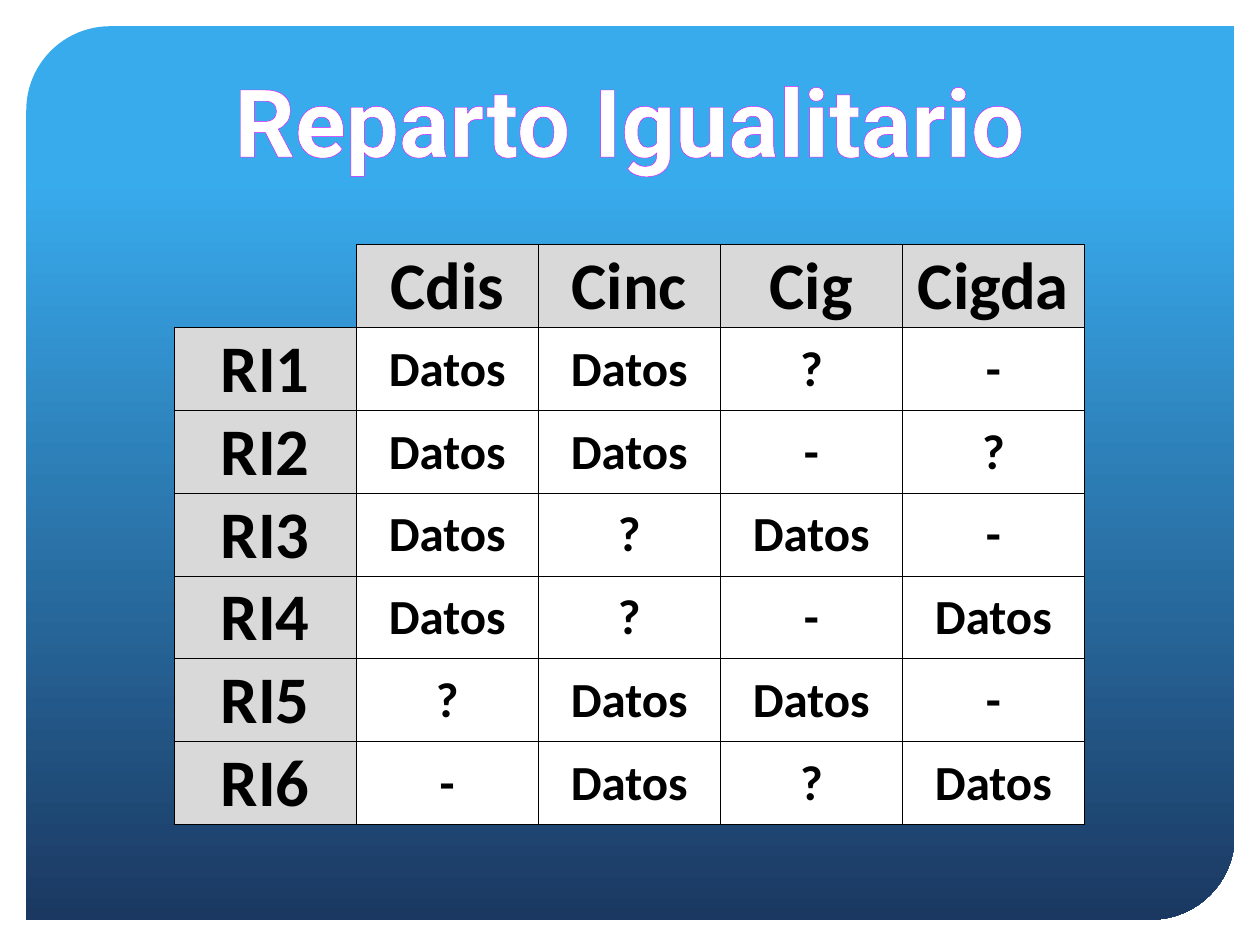
from lxml.etree import SubElement
from pptx import Presentation
from pptx.dml.color import RGBColor
from pptx.enum.shapes import MSO_SHAPE as Shape
from pptx.enum.text import MSO_ANCHOR as Anchor, MSO_AUTO_SIZE as AutoSize, PP_ALIGN as Align
from pptx.oxml.ns import qn
from pptx.util import Cm, Pt


def color(value):
    return RGBColor.from_string(value)


def add_line(parent, tag, width, value):
    line = SubElement(parent, qn(tag), w=str(Pt(width)))
    if value:
        fill = SubElement(line, qn("a:solidFill"))
        SubElement(fill, qn("a:srgbClr"), val=value)
    else:
        SubElement(line, qn("a:noFill"))


deck = Presentation()
deck.slide_width, deck.slide_height = Cm(25.4), Cm(19.05)
page = deck.slides.add_slide(deck.slide_layouts[6])

panel = page.shapes.add_shape(Shape.ROUND_2_DIAG_RECTANGLE, Cm(0.53), Cm(0.53), Cm(24.36), Cm(18.01))
panel.shadow.inherit = False
panel.adjustments[0] = 0.094
panel.adjustments[1] = 0
panel.line.fill.background()
panel.fill.gradient()
panel.fill.gradient_angle = 270
for stop, position, value in zip(panel.fill.gradient_stops, (0.17, 1), ("38ABED", "1B3861")):
    stop.position = position
    stop.color.rgb = color(value)

title = page.shapes.add_textbox(Cm(4.06), Cm(1.14), Cm(17.27), Cm(2.57))
title.text_frame.text = "Reparto Igualitario"
title.text_frame.word_wrap = False
title.text_frame.auto_size = AutoSize.SHAPE_TO_FIT_TEXT
para = title.text_frame.paragraphs[0]
para.alignment = Align.CENTER
span = para.runs[0]
add_line(span.font._element, "a:ln", 1, "E113FF")
span.font.name = "Roboto"
span.font.size = Pt(54)
span.font.bold = True
span.font.color.rgb = color("FFFFFF")

rows = [
    ["", "Cdis", "Cinc", "Cig", "Cigda"],
    ["RI1", "Datos", "Datos", "?", "-"],
    ["RI2", "Datos", "Datos", "-", "?"],
    ["RI3", "Datos", "?", "Datos", "-"],
    ["RI4", "Datos", "?", "-", "Datos"],
    ["RI5", "?", "Datos", "Datos", "-"],
    ["RI6", "-", "Datos", "?", "Datos"],
]
column_width, row_height = Cm(3.67), Cm(1.67)
table = page.shapes.add_table(
    len(rows), len(rows[0]), Cm(3.51), Cm(4.93), column_width * len(rows[0]), row_height * len(rows)
).table
table.first_row = False
table.horz_banding = False
for column in table.columns:
    column.width = column_width
for row in table.rows:
    row.height = row_height

for row_index, texts in enumerate(rows):
    for column_index, text in enumerate(texts):
        cell = table.cell(row_index, column_index)
        cell.vertical_anchor = Anchor.MIDDLE
        cell.margin_left = cell.margin_right = cell.margin_top = Cm(0.03)
        cell.margin_bottom = 0
        properties = cell._tc.get_or_add_tcPr()
        for side in "LRTB":
            visible = text or side in "RB"
            add_line(properties, f"a:ln{side}", 0.5, "000000" if visible else None)
        if not text:
            cell.fill.background()
            continue
        heading = row_index == 0 or column_index == 0
        cell.fill.solid()
        cell.fill.fore_color.rgb = color("D9D9D9" if heading else "FFFFFF")
        cell.text_frame.text = text
        para = cell.text_frame.paragraphs[0]
        para.alignment = Align.CENTER
        span = para.runs[0]
        span.font.name = "Calibri"
        span.font.size = Pt(38 if heading else 28)
        span.font.bold = True
        span.font.color.rgb = color("000000")

deck.save("out.pptx")
